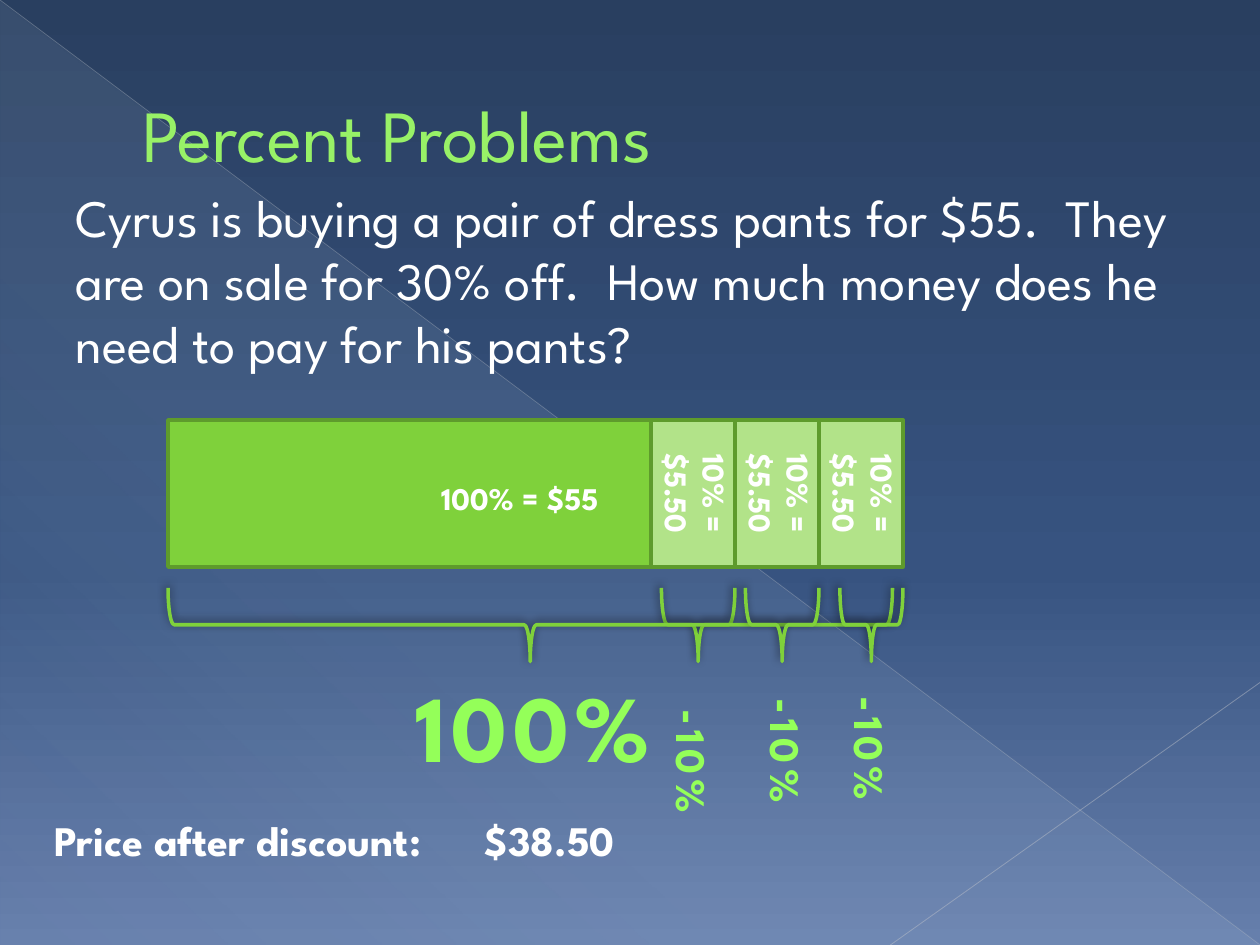
"""Build the percent problems slide with a bar model of a 30% discount."""
import pptx
import pptx.dml.color
import pptx.enum.shapes
import pptx.enum.text
import pptx.oxml
import pptx.oxml.ns
import pptx.util

RGBColor = pptx.dml.color.RGBColor
WHITE = RGBColor(0xFF, 0xFF, 0xFF)
TITLE_GREEN = RGBColor(0x98, 0xF1, 0x67)
BAR_GREEN = RGBColor(0x7F, 0xD1, 0x3B)
PALE_GREEN = RGBColor(0xB2, 0xE3, 0x89)
EDGE_GREEN = RGBColor(0x5E, 0x9B, 0x2C)
LABEL_GREEN = RGBColor(0x94, 0xFF, 0x59)
NIGHT, NAVY, HAZE = RGBColor(0x29, 0x3F, 0x60), RGBColor(0x37, 0x53, 0x80), RGBColor(0x66, 0x7F, 0xAC)
ICE = RGBColor(0xD6, 0xEC, 0xFF)
SILVER, PEARL = RGBColor(0xB7, 0xBC, 0xC5), RGBColor(0xBF, 0xC3, 0xCB)

FONT = "League Spartan"
SHAPE = pptx.enum.shapes.MSO_SHAPE
ALIGN = pptx.enum.text.PP_ALIGN
ANCHOR = pptx.enum.text.MSO_ANCHOR
FIT = pptx.enum.text.MSO_AUTO_SIZE
NAMESPACE = pptx.oxml.ns.nsdecls("a")

deck = pptx.Presentation()
deck.slide_width = pptx.util.Inches(10)
deck.slide_height = pptx.util.Inches(7.5)
UNIT = deck.slide_width / 120
page = deck.slides.add_slide(deck.slide_layouts[1])


def set_gradient(element, stops, angle):
    """Write gradient stops of (position, colour, opacity) and a clockwise angle."""
    stop_list = element.xpath(".//a:gsLst")[0]
    for stop in list(stop_list):
        stop_list.remove(stop)
    for position, color, opacity in stops:
        stop_list.append(pptx.oxml.parse_xml(
            f'<a:gs {NAMESPACE} pos="{position * 1000}"><a:srgbClr val="{color}">'
            f'<a:alpha val="{opacity * 1000}"/></a:srgbClr></a:gs>'))
    element.xpath(".//a:lin")[0].set("ang", str(angle * 60000))


def write_text(box, grid, text, size, color, bold=True, align=ALIGN.LEFT, turn=0):
    """Place a box on the grid and write one paragraph in it."""
    box.left, box.top, box.width, box.height = [round(value * UNIT) for value in grid]
    box.rotation = turn
    box.text_frame.word_wrap = True
    box.text_frame.auto_size = FIT.NONE
    para = box.text_frame.paragraphs[0]
    para.alignment = align
    span = para.add_run()
    span.text = text
    span.font.name = FONT
    span.font.size = pptx.util.Pt(size)
    span.font.bold = bold
    span.font.color.rgb = color
    return para


page.background.fill.gradient()
set_gradient(page._element, [(0, NIGHT, 100), (60, NAVY, 100), (100, HAZE, 100)], 90)

triangle = page.shapes.add_shape(SHAPE.RIGHT_TRIANGLE, 0, 0, deck.slide_width, deck.slide_height)
triangle.shadow.inherit = False
triangle.line.fill.background()
triangle.fill.gradient()
set_gradient(triangle._element, [(0, ICE, 10), (70, ICE, 8), (100, ICE, 1)], 133)

for start_x, start_y, end_x, end_y, color, width, opacity in [
        (0, 0, 120, 90, SILVER, 0.39, 35), (120, 65, 84.8, 90, PEARL, 0.47, 45)]:
    ray = page.shapes.add_connector(
        pptx.enum.shapes.MSO_CONNECTOR.STRAIGHT,
        *[round(value * UNIT) for value in (start_x, start_y, end_x, end_y)])
    ray.line.color.rgb = color
    ray.line.width = pptx.util.Pt(width)
    ray._element.xpath(".//a:ln//a:srgbClr")[0].append(
        pptx.oxml.parse_xml(f'<a:alpha {NAMESPACE} val="{opacity * 1000}"/>'))
    ray._element.spPr.append(pptx.oxml.parse_xml(f"<a:effectLst {NAMESPACE}/>"))

title, body = page.shapes.title, page.placeholders[1]
for placeholder in (title, body):
    page.shapes._spTree.append(placeholder._element)
heading = write_text(title, (6, 3.5, 108, 18.4), "Percent Problems", 42, TITLE_GREEN, bold=False)
heading._p.get_or_add_pPr().set("marL", str(pptx.util.Inches(0.53)))
title.text_frame.vertical_anchor = ANCHOR.MIDDLE
question = write_text(
    body, (6, 17, 108, 60),
    "Cyrus is buying a pair of dress pants for $55.  They are on sale for 30% off.  "
    "How much money does he need to pay for his pants?", 30, WHITE, bold=False)
question.space_before = pptx.util.Pt(6)
properties = question._p.get_or_add_pPr()
properties.set("marL", "0")
properties.set("indent", "0")
properties.append(pptx.oxml.parse_xml(f"<a:buNone {NAMESPACE}/>"))

for column, span_columns, color in [
        (16, 69, BAR_GREEN), (62, 8, PALE_GREEN), (70, 8, PALE_GREEN), (78, 8, PALE_GREEN)]:
    bar = page.shapes.add_shape(
        SHAPE.RECTANGLE, *[round(value * UNIT) for value in (column, 40, span_columns, 14)])
    bar.shadow.inherit = False
    bar.fill.solid()
    bar.fill.fore_color.rgb = color
    bar.line.color.rgb = EDGE_GREEN
    bar.line.width = pptx.util.Pt(2)
    label = page.shapes.add_textbox(0, 0, 0, 0)
    if color == BAR_GREEN:
        write_text(label, (24, 45, 51, 4.8), "100% = $55", 18, WHITE, align=ALIGN.CENTER)
    else:
        write_text(label, (column - 2.75, 42.75, 14, 8.5), "10% = $5.50", 18, WHITE,
                   align=ALIGN.CENTER, turn=90)

for column, span_columns in [(63, 7), (16, 69), (71, 7), (80, 6)]:
    grid = (column + span_columns / 2 - 3.5, 59.5 - span_columns / 2, 7, span_columns)
    brace = page.shapes.add_shape(SHAPE.LEFT_BRACE, *[round(value * UNIT) for value in grid])
    brace.rotation = 270
    brace.fill.background()
    brace.line.color.rgb = BAR_GREEN
    brace.line.width = pptx.util.Pt(2)
    brace._element.spPr.append(pptx.oxml.parse_xml(
        f'<a:effectLst {NAMESPACE}><a:outerShdw blurRad="63500" dist="25400" dir="14700000" '
        'rotWithShape="0"><a:srgbClr val="000000"><a:alpha val="50000"/></a:srgbClr>'
        '</a:outerShdw></a:effectLst>'))

for grid, text, size, turn in [
        ((37, 63, 27.5, 12), "100%", 54, 0),
        ((74.6, 68.3, 16.7, 6), "-10%", 24, 90),
        ((67.5, 68.5, 15, 6), "-10%", 24, 90),
        ((58.5, 69.5, 15, 6), "-10%", 24, 90)]:
    share = page.shapes.add_textbox(0, 0, 0, 0)
    para = write_text(share, grid, text, size, LABEL_GREEN, align=ALIGN.CENTER, turn=turn)
    para.runs[0].font._element.set("spc", "300")
    share.text_frame.word_wrap = turn != 0

for grid, text in [((4, 77, 72, 6), "Price after discount:"), ((45, 77, 18, 6), "$38.50")]:
    write_text(page.shapes.add_textbox(0, 0, 0, 0), grid, text, 24, WHITE)

deck.save("out.pptx")
